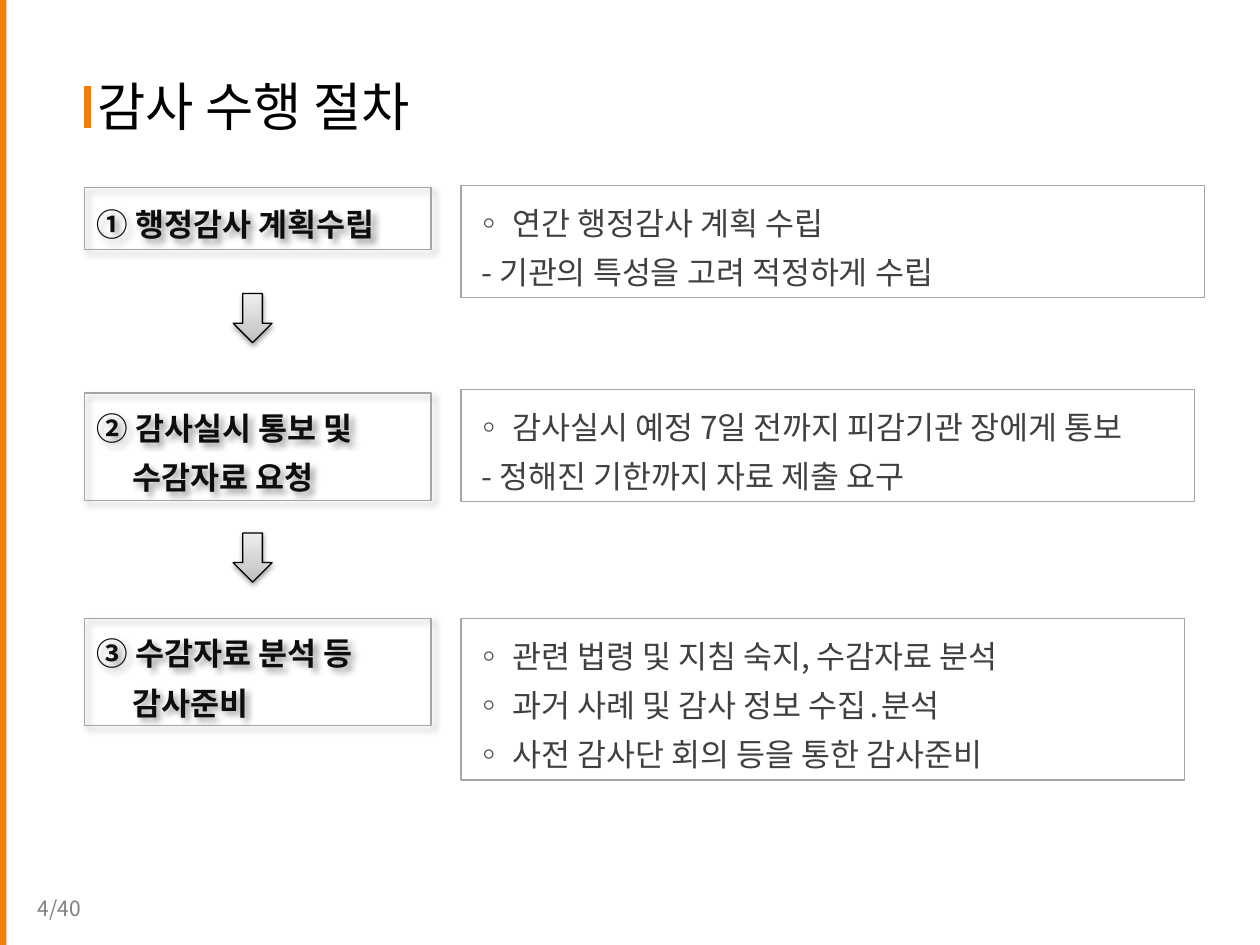
from copy import deepcopy
from lxml import etree
from pptx import Presentation
from pptx.dml.color import RGBColor
from pptx.enum import shapes, text
from pptx.oxml.ns import qn
from pptx.util import Inches, Pt

# Content: each line is (text, left indent in inches)
TITLE = "감사 수행 절차"
PAGE = "4/40"
SUB, DASH = 0.28, 0.06
STEPS = [
    dict(top=1.49, height=0.49, lines=[("① 행정감사 계획수립", 0)],
         detail_top=1.47, detail_size=(5.9, 0.89),
         details=[("◦ 연간 행정감사 계획 수립", 0),
                  ("- 기관의 특성을 고려 적정하게 수립", DASH)]),
    dict(top=3.12, height=0.85,
         lines=[("② 감사실시 통보 및", 0), ("수감자료 요청", SUB)],
         detail_top=3.09, detail_size=(5.82, 0.89),
         details=[("◦ 감사실시 예정 7일 전까지 피감기관 장에게 통보", 0),
                  ("- 정해진 기한까지 자료 제출 요구", DASH)]),
    dict(top=4.91, height=0.85,
         lines=[("③ 수감자료 분석 등", 0), ("감사준비", SUB)],
         detail_top=4.91, detail_size=(5.74, 1.28),
         details=[("◦ 관련 법령 및 지침 숙지, 수감자료 분석", 0),
                  ("◦ 과거 사례 및 감사 정보 수집․분석", 0),
                  ("◦ 사전 감사단 회의 등을 통한 감사준비", 0)]),
]
ARROW_TOPS = [2.33, 4.23]
STEP_LEFT, STEP_WIDTH, DETAIL_LEFT = 0.67, 2.75, 3.66

THEME = dict(
    font="Noto Sans CJK KR", title_size=30, body_size=18, page_size=12,
    accent="F07F09", border="A6A6A6", black="000000",
    step="0D0D0D", detail="404040", page="808080",
    arrow=[(0, "BDBDBD"), (0.35, "D1D1D1"), (1, "EEEEEE")],
)
RECT = shapes.MSO_SHAPE.RECTANGLE

prs = Presentation()
prs.slide_width, prs.slide_height = Inches(10), Inches(7.5)
slide = prs.slides.add_slide(prs.slide_layouts[6])


def rgb(name):
    return RGBColor.from_string(THEME.get(name, name))


def add_shape(kind, left, top, width, height, fill=None, line=None):
    shape = slide.shapes.add_shape(kind, *map(Inches, (left, top, width, height)))
    shape.shadow.inherit = False
    if fill:
        shape.fill.solid()
        shape.fill.fore_color.rgb = rgb(fill)
    else:
        shape.fill.background()
    if line:
        shape.line.color.rgb = rgb(line)
        shape.line.width = Pt(0.75)
    else:
        shape.line.fill.background()
    return shape


def add_shadow(shape, alpha, blur, distance, angle):
    effects = shape._element.spPr.find(qn("a:effectLst"))
    shadow = etree.SubElement(
        effects, qn("a:outerShdw"), blurRad=str(Pt(blur)), dist=str(Pt(distance)),
        dir=str(angle * 60000), algn="ctr", rotWithShape="0")
    color = etree.SubElement(shadow, qn("a:srgbClr"), val=THEME["black"])
    etree.SubElement(color, qn("a:alpha"), val=str(alpha * 1000))


def write(shape, lines, size, color, bold=False, spacing=None, inset=0.1,
          anchor=text.MSO_ANCHOR.MIDDLE, grow=True):
    frame = shape.text_frame
    frame.word_wrap = True
    frame.vertical_anchor = anchor
    frame.margin_left = Inches(inset)
    frame.auto_size = (text.MSO_AUTO_SIZE.SHAPE_TO_FIT_TEXT if grow
                       else text.MSO_AUTO_SIZE.NONE)
    for i, (line, indent) in enumerate(lines):
        paragraph = frame.add_paragraph() if i else frame.paragraphs[0]
        paragraph.alignment = text.PP_ALIGN.LEFT
        if spacing:
            paragraph.line_spacing = spacing
        if indent:
            paragraph._p.get_or_add_pPr().set("marL", str(Inches(indent)))
        run = paragraph.add_run()
        run.text = line
        run.font.size, run.font.bold = Pt(THEME[size]), bold
        run.font.color.rgb = rgb(color)
        run.font.name = THEME["font"]
        etree.SubElement(run.font._element, qn("a:ea"), typeface=THEME["font"])


def add_text(left, top, width, height, lines, **style):
    box = slide.shapes.add_textbox(*map(Inches, (left, top, width, height)))
    write(box, lines, **style)


# Title with its accent mark
add_text(0.43, 0.44, 5.12, 0.79, [(TITLE, 0)], size="title_size", color="black",
         inset=0.34, grow=False)
add_shape(shapes.MSO_SHAPE.FLOWCHART_PROCESS, STEP_LEFT, 0.68, 0.05, 0.34, fill="accent")

# Steps and their details
for step in STEPS:
    step_box = add_shape(RECT, STEP_LEFT, step["top"], STEP_WIDTH, step["height"],
                         line="border")
    add_shadow(step_box, alpha=40, blur=4, distance=3, angle=45)
    write(step_box, step["lines"], "body_size", "step", bold=True, spacing=1.3)
    detail_box = add_shape(RECT, DETAIL_LEFT, step["detail_top"], *step["detail_size"],
                           line="border")
    write(detail_box, step["details"], "body_size", "detail", spacing=1.3)

# Arrows between steps
for top in ARROW_TOPS:
    arrow = add_shape(shapes.MSO_SHAPE.DOWN_ARROW, 1.85, top, 0.31, 0.39, line="black")
    arrow.fill.gradient()
    arrow.fill.gradient_angle = 90
    stop_list = arrow._element.spPr.find(".//" + qn("a:gsLst"))
    stop_list.append(deepcopy(stop_list[0]))
    for stop, (position, color) in zip(arrow.fill.gradient_stops, THEME["arrow"]):
        stop.position = position
        stop.color.rgb = rgb(color)
    add_shadow(arrow, alpha=38, blur=3.1, distance=1.6, angle=90)

# Left edge and page number
add_shape(RECT, 0, 0, 0.05, 7.5, fill="accent")
add_text(0.2, 7.06, 0.55, 0.3, [(PAGE, 0)], size="page_size", color="page",
         anchor=text.MSO_ANCHOR.TOP)

prs.save("out.pptx")
